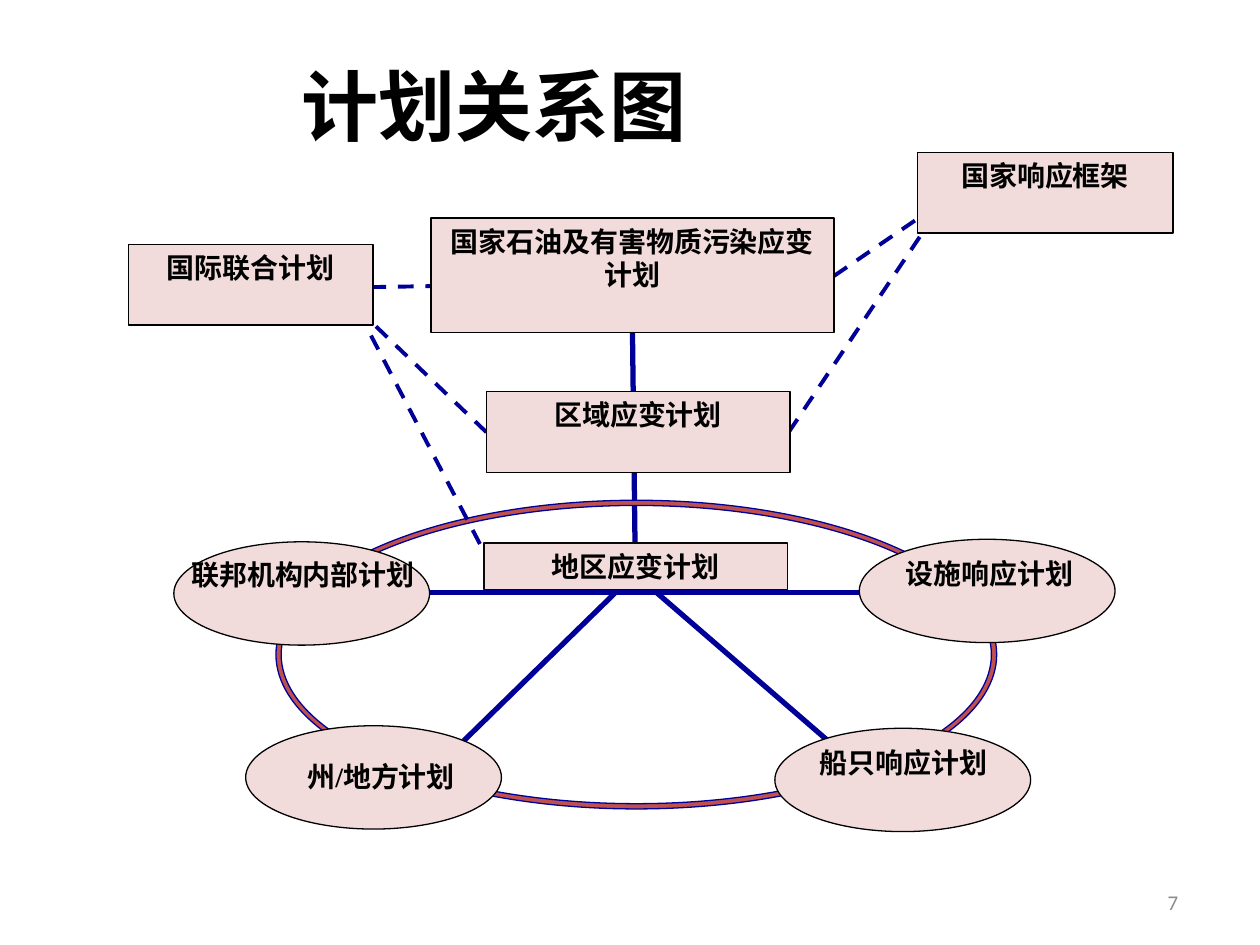
"""Build the slide that shows how the contingency plans relate to each other."""
from lxml.etree import SubElement
from pptx import Presentation
from pptx.dml.color import RGBColor
from pptx.enum.dml import MSO_LINE
from pptx.enum.shapes import MSO_CONNECTOR, MSO_SHAPE as Preset
from pptx.enum.text import MSO_ANCHOR as Anchor, MSO_AUTO_SIZE, PP_ALIGN as Align
from pptx.oxml.ns import qn
from pptx.util import Pt

PX = 9144
BLACK = RGBColor(0x00, 0x00, 0x00)
GREY = RGBColor(0x8C, 0x8C, 0x8C)
NAVY = RGBColor(0x00, 0x00, 0x99)
PINK = RGBColor(0xF2, 0xDC, 0xDB)
RED = RGBColor(0xC0, 0x50, 0x4D)
NEAR_BLACK = RGBColor(0x08, 0x08, 0x08)

PLAN_BOXES = [
    ("国家石油及有害物质污染应变计划", (342, 173, 320, 91), BLACK),
    ("国家响应框架", (728, 121, 203, 64), BLACK),
    ("国际联合计划", (102, 194, 194, 64), BLACK),
    ("区域应变计划", (386, 311, 241, 64), BLACK),
    ("地区应变计划", (384, 431, 241, 37), NEAR_BLACK),
]
PLAN_OVALS = [
    ("联邦机构内部计划", (138, 430), (135, 438, 211, 64)),
    ("州/地方计划", (195, 576), (197, 598, 211, 37)),
    ("设施响应计划", (682, 428), (680, 437, 211, 64)),
    ("船只响应计划", (615, 578), (612, 587, 210, 64)),
]
OVAL_SIZE = (203, 82)
SPINE = (504, 431, 502, 264)
LOCAL_LINKS = [(663, 593, 508, 459), (368, 588, 498, 461), (332, 470, 688, 470)]
OUTSIDE_LINKS = [
    (626, 343, 732, 185),
    (662, 219, 735, 169),
    (391, 451, 288, 254),
    (386, 343, 291, 252),
    (350, 227, 286, 228),
]


def px(*lengths):
    """Turn lengths in px into EMU."""
    return [length * PX for length in lengths]


def write_text(holder, text, font="Arial", size=16, bold=True, color=BLACK,
               align=Align.CENTER, anchor=Anchor.TOP):
    """Put one formatted paragraph into a shape."""
    frame = holder.text_frame
    frame.word_wrap = True
    frame.auto_size = MSO_AUTO_SIZE.NONE
    frame.vertical_anchor = anchor
    paragraph = frame.paragraphs[0]
    paragraph.alignment = align
    run = paragraph.add_run()
    run.text = text
    run.font.name = font
    run.font.size = Pt(size)
    run.font.bold = bold
    run.font.color.rgb = color


def add_figure(shapes, preset, bounds, fill=PINK, outline=BLACK):
    """Add a filled preset shape with a thin outline."""
    figure = shapes.add_shape(preset, *px(*bounds))
    figure.shadow.inherit = False
    figure.fill.solid()
    figure.fill.fore_color.rgb = fill
    figure.line.color.rgb = outline
    figure.line.width = Pt(0.75)
    return figure


def add_link(shapes, ends, width=3, dash=None):
    """Add a straight navy line between two points."""
    link = shapes.add_connector(MSO_CONNECTOR.STRAIGHT, *px(*ends))
    link.line.color.rgb = NAVY
    link.line.width = Pt(width)
    if dash:
        link.line.dash_style = dash
    SubElement(link._element.spPr, qn("a:effectLst"))


def add_plan_oval(shapes, text, corner, label_bounds):
    """Add a grouped oval and its label."""
    plan = shapes.add_group_shape().shapes
    add_figure(plan, Preset.OVAL, corner + OVAL_SIZE)
    label = plan.add_textbox(*px(*label_bounds))
    write_text(label, text, font="Times New Roman")


def add_title(slide, text):
    """Move and fill the title placeholder."""
    title = slide.shapes.title
    title.left, title.top, title.width, title.height = px(29, 32, 727, 102)
    write_text(title, text, font="Calibri", size=44, anchor=Anchor.MIDDLE)


def add_page_number(shapes, number):
    """Add the page number at the lower right."""
    box = shapes.add_textbox(*px(712, 696, 233, 40))
    write_text(box, number, font="Calibri", size=12, bold=False, color=GREY,
               align=Align.RIGHT, anchor=Anchor.MIDDLE)


def main():
    """Build and save the presentation."""
    deck = Presentation()
    deck.slide_width, deck.slide_height = px(1000, 750)
    slide = deck.slides.add_slide(deck.slide_layouts[5])
    shapes = slide.shapes
    add_title(slide, "计划关系图")
    add_link(shapes, SPINE)
    ring = add_figure(shapes, Preset.DONUT, (219, 397, 572, 245), RED, NAVY)
    ring.adjustments[0] = 0.017
    for ends in LOCAL_LINKS:
        add_link(shapes, ends)
    for ends in OUTSIDE_LINKS:
        add_link(shapes, ends, width=2.25, dash=MSO_LINE.DASH)
    add_page_number(shapes, "7")
    for text, bounds, outline in PLAN_BOXES:
        write_text(add_figure(shapes, Preset.RECTANGLE, bounds, outline=outline), text)
    for text, corner, label_bounds in PLAN_OVALS:
        add_plan_oval(shapes, text, corner, label_bounds)
    deck.save("out.pptx")


if __name__ == "__main__":
    main()
